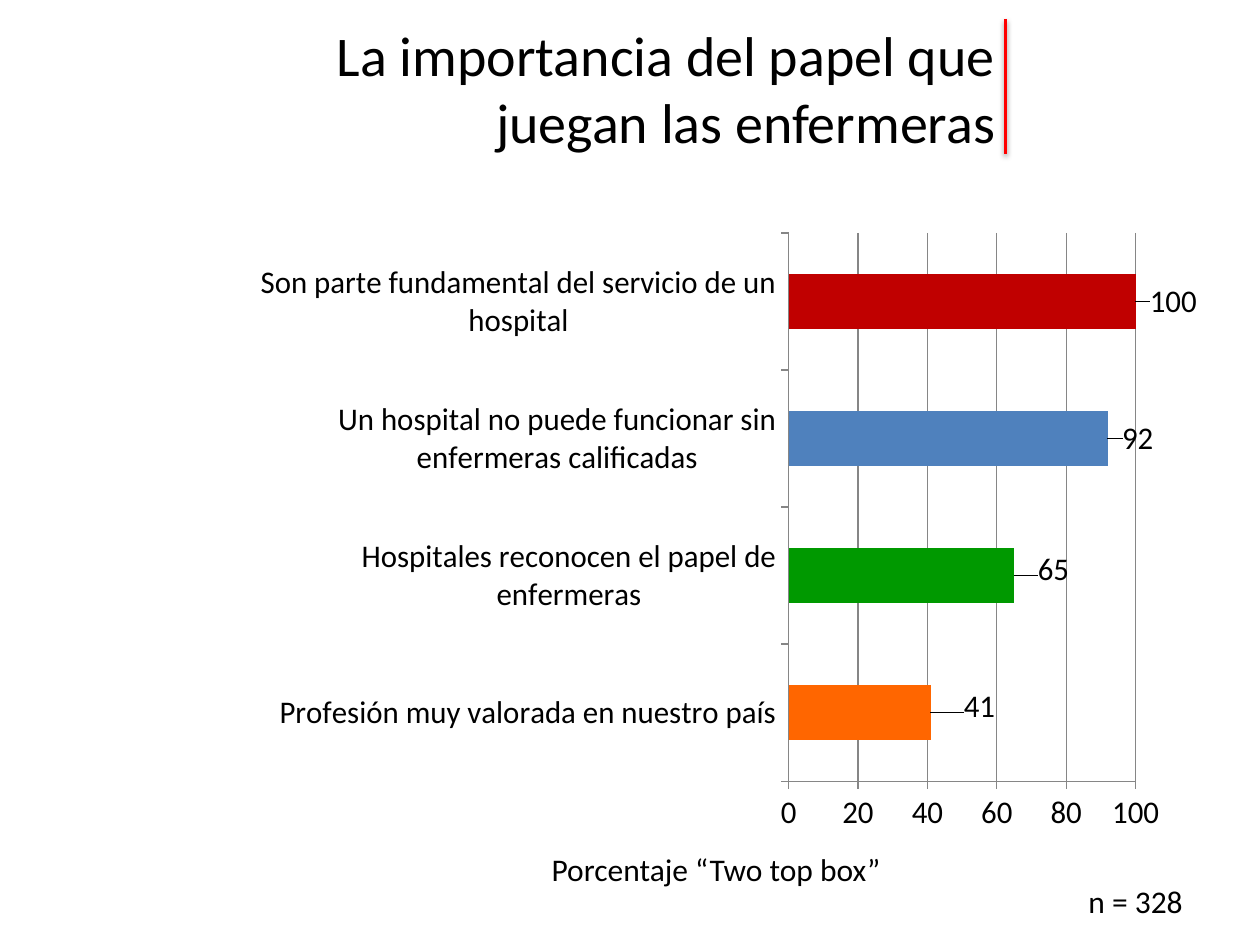
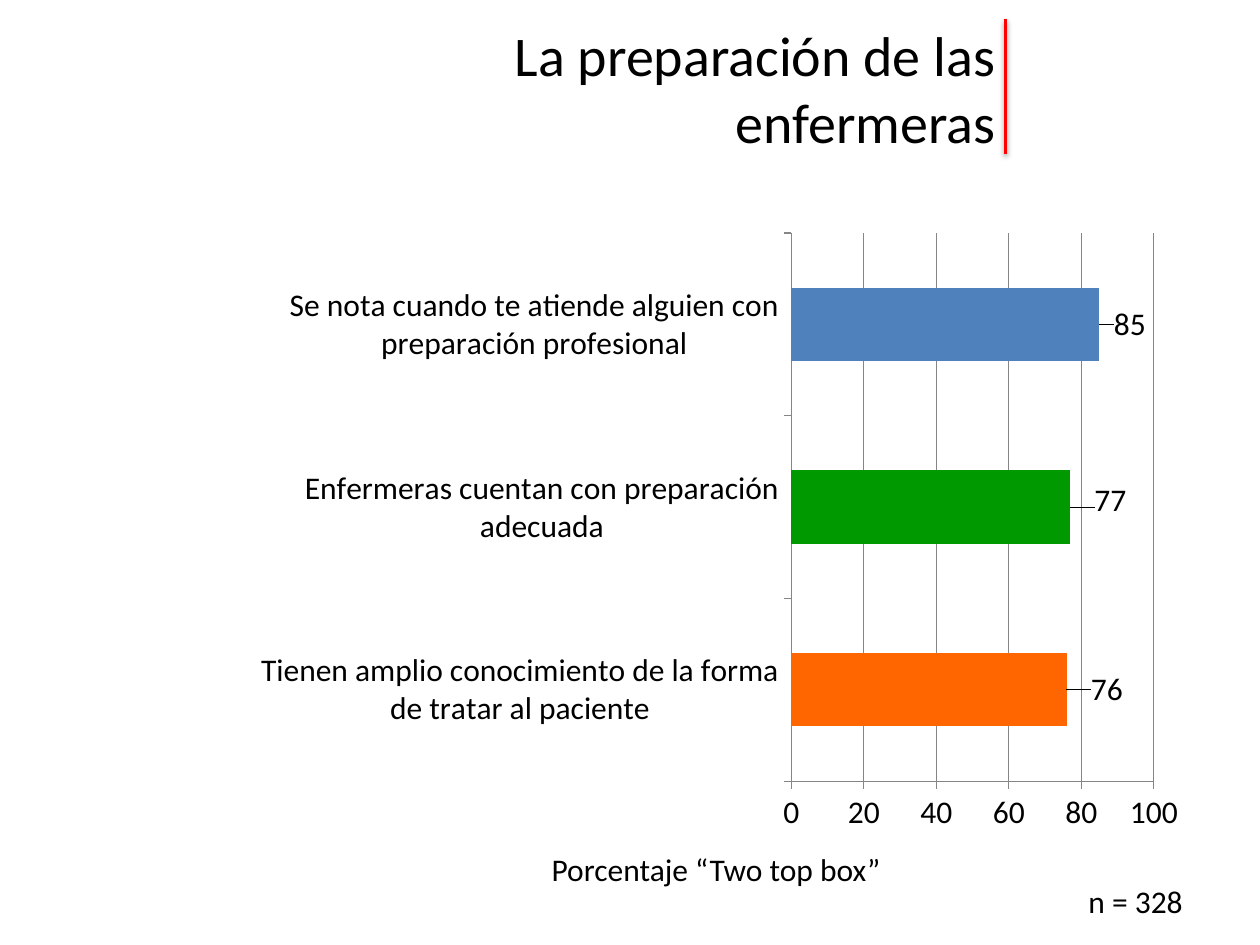
from lxml import etree
from pptx import Presentation
from pptx.chart.data import CategoryChartData
from pptx.dml.color import RGBColor
from pptx.enum.chart import XL_CHART_TYPE as ChartType
from pptx.enum.chart import XL_LABEL_POSITION as LabelPosition
from pptx.enum.chart import XL_TICK_MARK as TickMark
from pptx.enum.shapes import MSO_CONNECTOR as Connector
from pptx.enum.text import MSO_ANCHOR as Anchor
from pptx.enum.text import MSO_AUTO_SIZE as AutoSize
from pptx.enum.text import PP_ALIGN as Align
from pptx.oxml import parse_xml
from pptx.oxml.ns import nsdecls, qn
from pptx.util import Inches, Pt

# Shared style
FONT = "Calibri"
BLACK = RGBColor(0x00, 0x00, 0x00)
RED = RGBColor(0xFF, 0x00, 0x00)
GRID_GRAY = RGBColor(0x86, 0x86, 0x86)
ORANGE = RGBColor(0xFF, 0x66, 0x00)
GREEN = RGBColor(0x00, 0x99, 0x00)
BLUE = RGBColor(0x4F, 0x81, 0xBD)
CRIMSON = RGBColor(0xC0, 0x00, 0x00)
BAR_COLORS = [ORANGE, GREEN, BLUE, CRIMSON]
TITLE_SIZE, BODY_SIZE = Pt(32), Pt(18)

# Each row, from the bottom up: category, value, label shift (x, y)
IMPORTANCE = [
    ("Profesión muy valorada en nuestro país", 41, (0.03, -0.01)),
    ("Hospitales reconocen el papel de enfermeras", 65, (0.02, -0.01)),
    ("Un hospital no puede funcionar sin enfermeras calificadas", 92, (0.01, 0)),
    ("Son parte fundamental del servicio de un hospital", 100, (0.01, 0)),
]
TRAINING = [
    ("Tienen amplio conocimiento de la forma de tratar al paciente", 76, (0.02, 0)),
    ("Enfermeras cuentan con preparación adecuada", 77, (0.02, -0.01)),
    ("Se nota cuando te atiende alguien con preparación profesional", 85, (0.01, 0)),
]


def set_font(font, size):
    font.name, font.size, font.bold = FONT, size, False
    font.color.rgb = BLACK


def add_text(slide, text, left, top, width, height, size=BODY_SIZE):
    box = slide.shapes.add_textbox(
        Inches(left), Inches(top), Inches(width), Inches(height))
    frame = box.text_frame
    frame.text = text
    frame.word_wrap = False
    set_font(frame.paragraphs[0].font, size)
    return frame


def add_title(slide, text):
    frame = add_text(slide, text, 1.92, 0.07, 6.08, 1.25, TITLE_SIZE)
    frame.word_wrap = True
    frame.vertical_anchor = Anchor.MIDDLE
    frame.paragraphs[0].alignment = Align.RIGHT


def add_title_rule(slide):
    rule = slide.shapes.add_connector(
        Connector.STRAIGHT, Inches(7.98), Inches(0.15), Inches(7.98), Inches(1.22))
    rule.line.color.rgb = RED
    rule.line.width = Pt(2)
    rule._element.spPr.append(parse_xml(
        f'<a:effectLst {nsdecls("a")}>'
        f'<a:outerShdw blurRad="{Pt(3.1)}" dist="{Pt(1.6)}" dir="5400000" rotWithShape="0">'
        '<a:srgbClr val="000000"><a:alpha val="38000"/></a:srgbClr>'
        '</a:outerShdw></a:effectLst>'))


def add_caption(slide, text, left, top, width):
    add_text(slide, text, left, top, width, 0.4).auto_size = AutoSize.SHAPE_TO_FIT_TEXT


def shift_label(label, shift):
    """Move a value label by a fraction of the chart's width and height."""
    layout = etree.Element(qn("c:layout"))
    manual = etree.SubElement(layout, qn("c:manualLayout"))
    for axis, distance in zip("xy", shift):
        etree.SubElement(manual, qn(f"c:{axis}"), val=str(distance))
    label.find(qn("c:idx")).addnext(layout)


def style_axis(axis):
    axis.major_tick_mark = TickMark.OUTSIDE
    axis.minor_tick_mark = TickMark.NONE
    axis.format.line.color.rgb = GRID_GRAY


def add_bar_chart(slide, rows):
    categories, values, shifts = zip(*rows)
    data = CategoryChartData()
    data.categories = categories
    data.add_series("Series 1", values)
    chart = slide.shapes.add_chart(
        ChartType.BAR_CLUSTERED, Inches(1.92), Inches(1.75),
        Inches(7.58), Inches(4.95), data).chart
    chart.has_legend = chart.has_title = False
    set_font(chart.font, BODY_SIZE)

    # Axes
    style_axis(chart.category_axis)
    scale = chart.value_axis
    style_axis(scale)
    scale.minimum_scale, scale.maximum_scale, scale.major_unit = 0, 100, 20
    scale.has_major_gridlines = True
    scale.major_gridlines.format.line.color.rgb = GRID_GRAY

    # Bars and their values
    plot = chart.plots[0]
    plot.gap_width = 150
    plot.vary_by_categories = False
    bars = plot.series[0]
    bars.format.fill.solid()
    bars.format.fill.fore_color.rgb = BLUE
    bars.data_labels.show_value = True
    for index, color in enumerate(BAR_COLORS[:len(rows)]):
        point = bars.points[index]
        point.format.fill.solid()
        point.format.fill.fore_color.rgb = color
        point.data_label.position = LabelPosition.OUTSIDE_END
    for label, shift in zip(bars._element.iter(qn("c:dLbl")), shifts):
        shift_label(label, shift)


def add_survey_slide(deck, title, rows):
    slide = deck.slides.add_slide(deck.slide_layouts[6])
    add_title_rule(slide)
    add_caption(slide, "n = 328", 8.54, 6.95, 0.96)
    add_title(slide, title)
    add_bar_chart(slide, rows)
    add_caption(slide, "Porcentaje “Two top box”", 4.28, 6.7, 2.83)


def main():
    deck = Presentation()
    deck.slide_width, deck.slide_height = Inches(10), Inches(7.5)
    add_survey_slide(deck, "La importancia del papel que juegan las enfermeras", IMPORTANCE)
    add_survey_slide(deck, "La preparación de las enfermeras", TRAINING)
    deck.save("out.pptx")


if __name__ == "__main__":
    main()
